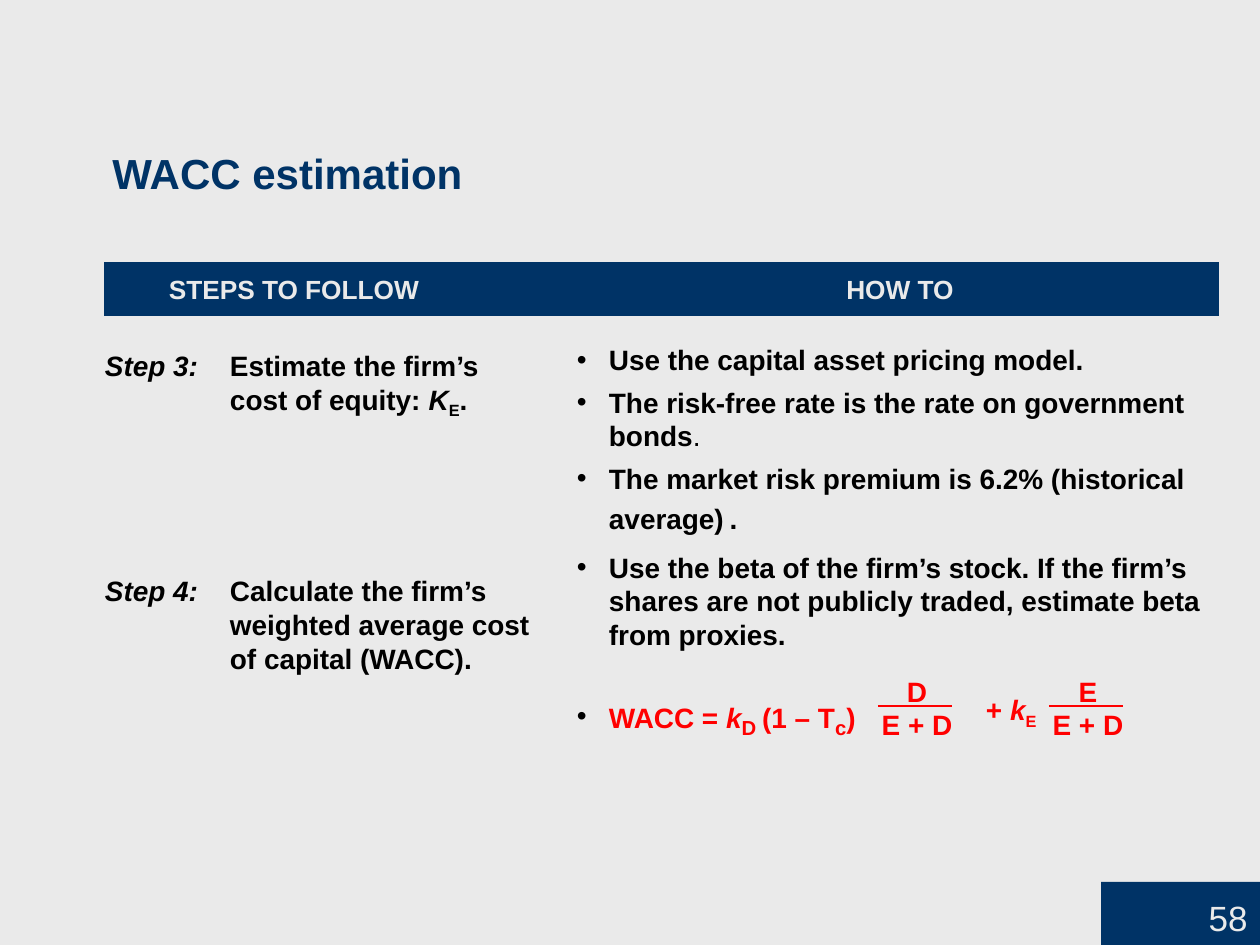
from lxml import etree
from pptx import Presentation
from pptx import util as u
from pptx.dml.color import RGBColor
from pptx.enum import shapes, text
from pptx.oxml.ns import qn

PX = 914400 / 126
C = {"bg": "EAEAEA", "navy": "003366", "ink": "000000", "red": "FF0000"}
B, I, PLAIN = {"bold": True}, {"bold": True, "italic": True}, {"bold": False}
SUB = {"bold": True, "base": -22}
BIG_SUB = {**SUB, "size": 20}


def px(n):
    return u.Emu(round(n * PX))


def rgb(name):
    return RGBColor.from_string(C[name])


def add_par(p, runs, size=16, color="ink", align=None, after=0):
    """Fill a paragraph with (text, format) runs."""
    p.alignment = align
    p.space_after = u.Pt(after)
    for words, fmt in runs:
        r = p.add_run()
        r.text = words
        f = r.font
        f.color.rgb = rgb(color)
        for key, val in {"name": "Arial", "size": size, **fmt}.items():
            if key == "base":
                r._r.get_or_add_rPr().set("baseline", str(val * 1000))
            else:
                setattr(f, key, u.Pt(val) if key == "size" else val)


def set_indent(p, hang=0, bullet=False, tabs=()):
    """Hanging indent, bullet and (px, alignment) tab stops."""
    pPr = p._p.get_or_add_pPr()
    if hang:
        pPr.set("marL", str(px(hang)))
        pPr.set("indent", str(-px(hang)))
    if bullet:
        clr = etree.SubElement(pPr, qn("a:buClr"))
        etree.SubElement(clr, qn("a:srgbClr"), val=C["ink"])
        etree.SubElement(pPr, qn("a:buFont"), typeface="Arial")
        etree.SubElement(pPr, qn("a:buChar"), char="•")
    if tabs:
        lst = etree.SubElement(pPr, qn("a:tabLst"))
        for pos, algn in tabs:
            etree.SubElement(lst, qn("a:tab"), pos=str(px(pos)), algn=algn)


def add_text(s, x, y, w, h, pars, inset=0, wrap=True, indent=None, **fmt):
    sp = s.shapes.add_textbox(px(x), px(y), px(w), px(h))
    tf = sp.text_frame
    tf.word_wrap = wrap
    if inset == 0:
        for side in ("left", "top", "right", "bottom"):
            setattr(tf, f"margin_{side}", 0)
    for i, runs in enumerate(pars):
        p = tf.add_paragraph() if i else tf.paragraphs[0]
        add_par(p, runs, **fmt)
        set_indent(p, **(indent or {}))


def add_bar(s, x, y, w, h):
    sp = s.shapes.add_shape(shapes.MSO_SHAPE.RECTANGLE, px(x), px(y), px(w), px(h))
    sp.shadow.inherit = False
    sp.fill.solid()
    sp.fill.fore_color.rgb = rgb("navy")
    sp.line.fill.background()
    return sp


def add_header(s, x, y, w, h):
    add_bar(s, x, y, w, h)
    add_text(s, x, y + 11, w, 32, [[("\tSTEPS TO FOLLOW\tHOW TO", B)]],
             size=15, color="bg", indent={"tabs": [(190, "ctr"), (796, "ctr")]})


def add_step(s, x, y, w, h, label, task):
    add_text(s, x, y, w, h, [[(label + "\t", I), *task]],
             indent={"hang": 125, "tabs": [(125, "l")]})


def add_how_to(s, x, y, w, h):
    add_text(s, x, y, w, h, [
        [("Use the capital asset pricing model.", B)],
        [("The risk-free rate is the rate on government bonds", B), (".", PLAIN)],
        [("The market risk premium is 6.2% (historical average)", B),
         (" ", BIG_SUB), (".", B)],
        [("Use the beta of the firm’s stock. If the firm’s shares are not "
          "publicly traded, estimate beta from proxies.", B)],
    ], after=5, indent={"hang": 32, "bullet": True})


def add_fraction(s, x, y, w, h, top, bottom):
    add_text(s, x, y, w, h, [[(top, B)], [(bottom, B)]], inset=None, wrap=False,
             color="red", align=text.PP_ALIGN.CENTER)
    cn = s.shapes.add_connector(shapes.MSO_CONNECTOR.STRAIGHT,
                                px(x + 9), px(y + 38), px(x + 83), px(y + 38))
    cn.line.color.rgb = rgb("red")
    cn.line.width = u.Pt(1.5)
    etree.SubElement(cn._element.spPr, qn("a:effectLst"))


def add_formula(s, x, y, w, h):
    # Debt term, then equity term, each followed by its weight
    add_text(s, x, y, 292, h, [[
        ("WACC = ", B), ("k", I), ("D ", BIG_SUB), ("(1 – T", B), ("c", BIG_SUB),
        (")", B),
    ]], color="red", indent={"hang": 32, "bullet": True})
    add_text(s, x + 409, y, 60, h, [[("+ ", B), ("k", I), ("E", SUB)]], color="red")
    for dx, top in ((292, "D"), (463, "E")):
        add_fraction(s, x + dx, y - 25, 96, 81, top, "E + D")


def add_page_number(s, x, y, w, h, number):
    tf = add_bar(s, x, y, w, h).text_frame
    tf.vertical_anchor = text.MSO_ANCHOR.BOTTOM
    add_par(tf.paragraphs[0], [(number, {})], size=20, color="bg",
            align=text.PP_ALIGN.RIGHT)


def main():
    prs = Presentation()
    prs.slide_width, prs.slide_height = px(1260), px(945)
    s = prs.slides.add_slide(prs.slide_layouts[6])
    s.background.fill.solid()
    s.background.fill.fore_color.rgb = rgb("bg")

    add_page_number(s, 1101, 882, 159, 63, "58")
    add_text(s, 100, 141, 595, 63, [[("WACC estimation", B)]], inset=None,
             size=24, color="navy")
    add_header(s, 104, 262, 1115, 54)

    # Left column: steps
    add_step(s, 105, 349, 431, 141, "Step 3:",
             [("Estimate the firm’s cost of equity: ", B), ("K", I),
              ("E", SUB), (".", B)])
    add_step(s, 105, 574, 441, 174, "Step 4:",
             [("Calculate the firm’s weighted average cost of capital (WACC).", B)])

    # Right column: how to
    add_how_to(s, 577, 343, 640, 302)
    add_formula(s, 577, 693, 703, 34)
    prs.save("out.pptx")


if __name__ == "__main__":
    main()
